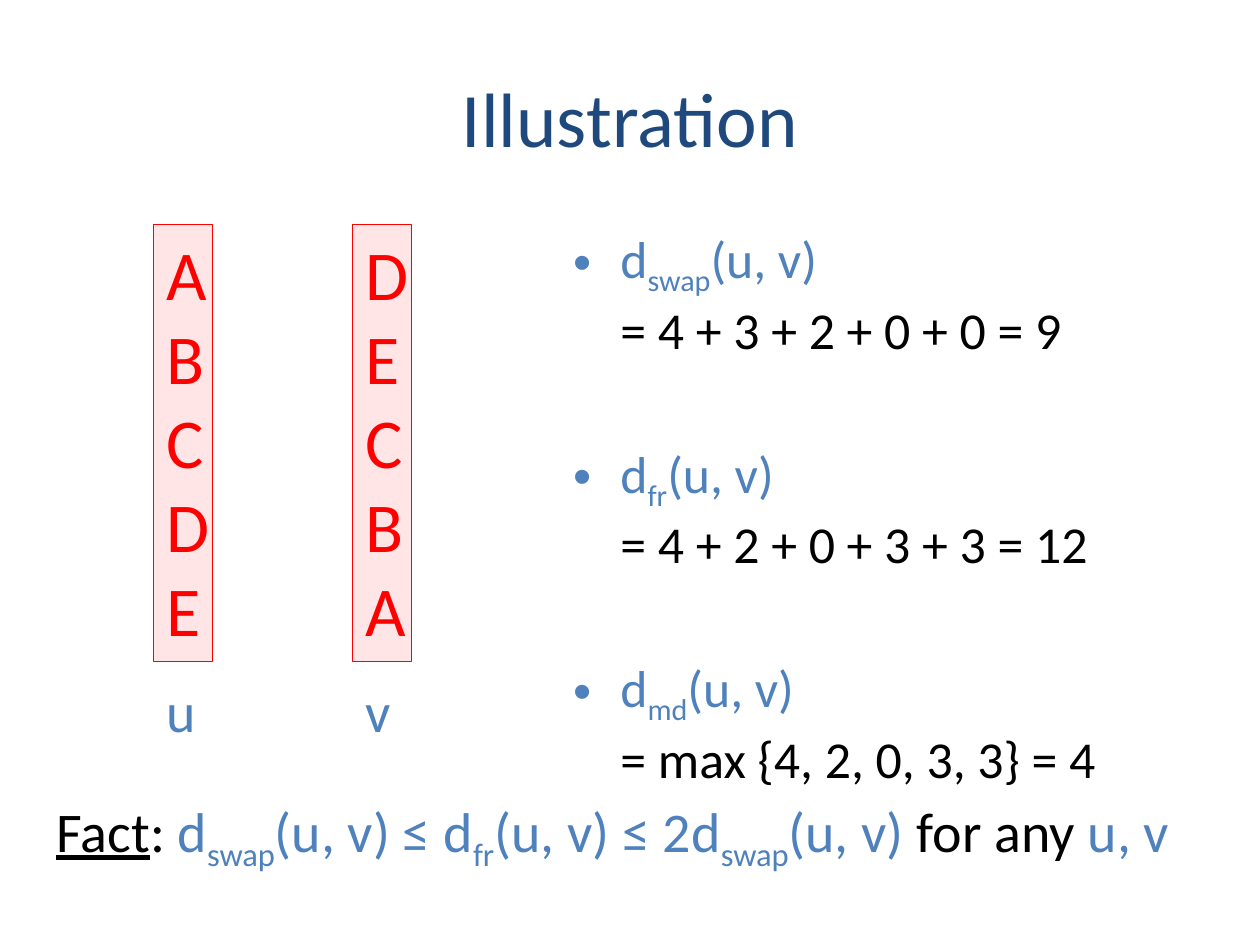
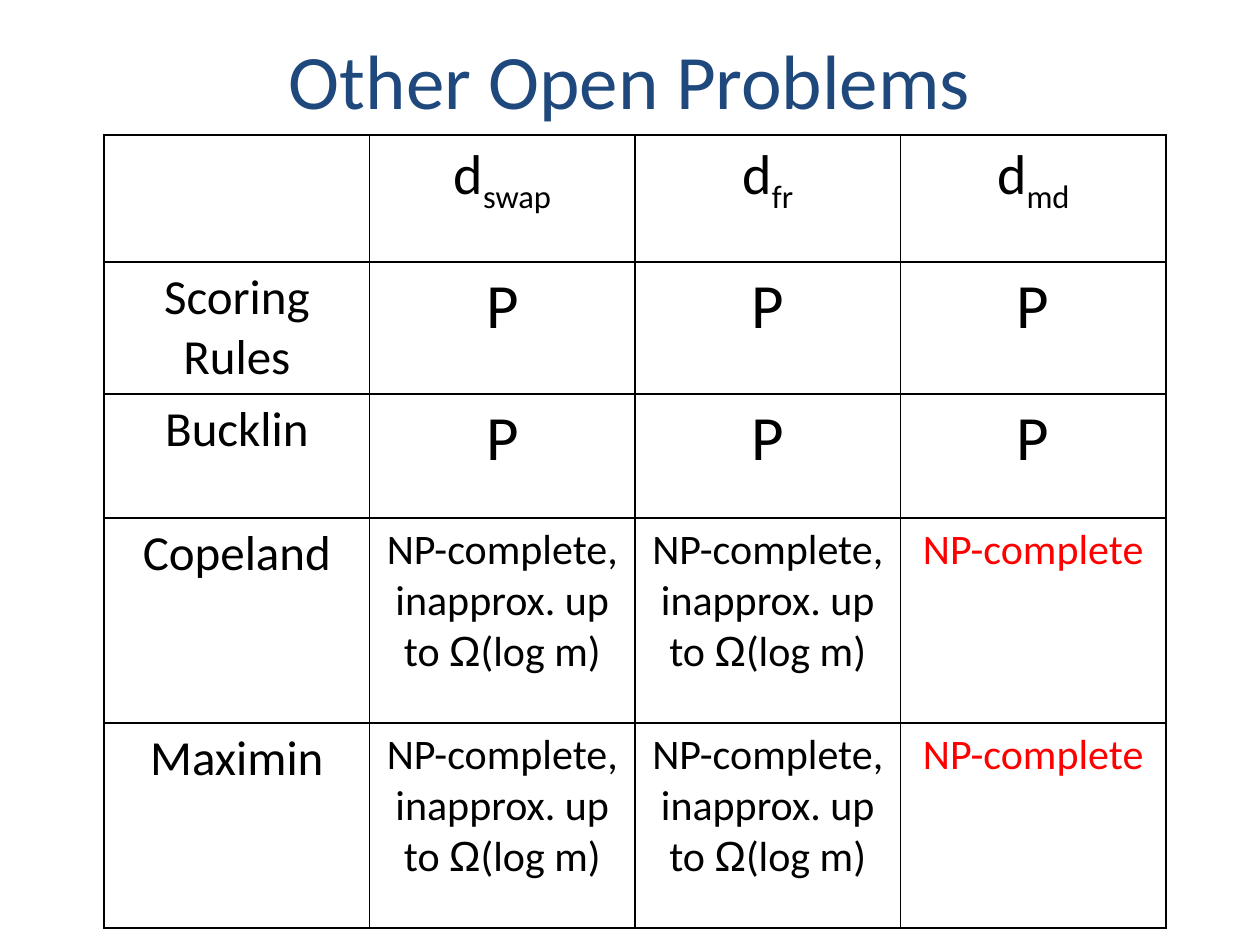
from lxml import etree
from pptx import Presentation
from pptx.dml.color import RGBColor
from pptx.enum.shapes import MSO_SHAPE
from pptx.enum.text import MSO_ANCHOR, PP_ALIGN
from pptx.oxml import parse_xml
from pptx.oxml.ns import nsdecls, qn
from pptx.util import Pt

RECT = MSO_SHAPE.RECTANGLE
TOP, MIDDLE = MSO_ANCHOR.TOP, MSO_ANCHOR.MIDDLE
LEFT, CENTER = PP_ALIGN.LEFT, PP_ALIGN.CENTER

NAVY = RGBColor(0x1F, 0x49, 0x7D)
BLUE = RGBColor(0x4F, 0x81, 0xBD)
RED = RGBColor(0xFF, 0, 0)
BLACK = RGBColor(0, 0, 0)
FONT, GREEK = "Calibri", "Arial"
SUB = "-25000"

TITLES = [("Illustration", 21.6), ("Other Open Problems", 0)]


def dist(name, color=BLUE, tail="(u, v)"):
    return [("d", color), (name, color, SUB), (tail, color)]


VOTES = [("u", ["ABCDE"], 87.84), ("v", ["DE", "CBA"], 201.6)]
SUMS = [
    ("swap", "= 4 + 3 + 2 + 0 + 0 = 9"),
    ("fr", "= 4 + 2 + 0 + 3 + 3 = 12"),
    ("md", "= max {4, 2, 0, 3, 3} = 4"),
]
FACT = [
    ("Fact", BLACK, None, True), (": ", BLACK),
    *dist("swap"), (" ≤ ", BLUE), *dist("fr"), (" ≤ 2", BLUE), *dist("swap"),
    (" for any ", BLACK), ("u, v", BLUE),
]

HEADS = ["swap", "fr", "md"]
EASY = (36, [("P", BLACK)])
HARD = (24, [("NP-complete, inapprox. up to ", BLACK),
             ("Ω", BLACK, None, False, GREEK), ("(log m)", BLACK)])
NEW = (24, [("NP-complete", RED)])
RULES = [
    ("Scoring Rules", [EASY] * 3, 75.4),
    ("Bucklin", [EASY] * 3, 70.9),
    ("Copeland", [HARD, HARD, NEW], 117.1),
    ("Maximin", [HARD, HARD, NEW], 117.1),
]
HEAD_H, COL_W = 72.6, 151.7


def add_run(para, size, text, color, base=None, line=False, face=FONT):
    run = para.add_run()
    run.text = text
    form = {"name": face, "size": Pt(size), "underline": line or None}
    for key, val in form.items():
        setattr(run.font, key, val)
    run.font.color.rgb = color
    if base:
        run.font._element.set("baseline", base)


def write(para, size, runs, align=LEFT):
    para.alignment = align
    for run in runs:
        add_run(para, size, *run)


def add_box(slide, area, anchor=TOP):
    frame = slide.shapes.add_textbox(*map(Pt, area)).text_frame
    frame.word_wrap = True
    frame.vertical_anchor = anchor
    return frame


def add_slide(deck, title, top):
    slide = deck.slides.add_slide(deck.slide_layouts[6])
    frame = add_box(slide, (36, top, 648, 90), MIDDLE)
    write(frame.paragraphs[0], 44, [(title, NAVY)], CENTER)
    return slide


def add_bullet(para):
    props = para._p.get_or_add_pPr()
    props.set("marL", str(Pt(27)))
    props.set("indent", str(Pt(-27)))
    etree.SubElement(props, qn("a:buFont")).set("typeface", GREEK)
    etree.SubElement(props, qn("a:buChar")).set("char", "•")


def add_vote(slide, name, lines, left):
    bar = slide.shapes.add_shape(RECT, Pt(left), Pt(128.2), Pt(33.8), Pt(249.8))
    bar.shadow.inherit = False
    bar.fill.solid()
    bar.fill.fore_color.rgb = RED
    tint = bar._element.spPr.find(qn("a:solidFill"))[0]
    etree.SubElement(tint, qn("a:alpha")).set("val", "10000")
    bar.line.color.rgb = RED
    bar.line.width = Pt(0.75)
    frame = bar.text_frame
    frame.word_wrap = True
    frame.vertical_anchor = TOP
    for i, text in enumerate(lines):
        para = frame.add_paragraph() if i else frame.paragraphs[0]
        write(para, 40, [(text, RED)])
    label = add_box(slide, (left, 383, 36, 46))
    write(label.paragraphs[0], 32, [(name, BLUE)])


def add_sums(slide):
    frame = add_box(slide, (320.4, 126, 363.6, 356.4))
    for i, (name, total) in enumerate(SUMS):
        para = frame.add_paragraph() if i else frame.paragraphs[0]
        para.space_before = Pt(46.7 if i else 3)
        write(para, 29.6, dist(name))
        para.add_line_break()
        add_run(para, 29.6, total, BLACK)
        add_bullet(para)


def fill_cell(cell, size, runs):
    write(cell.text_frame.paragraphs[0], size, runs, CENTER)
    props = cell._tc.get_or_add_tcPr()
    for side in "LRTB":
        props.append(parse_xml(
            f'<a:ln{side} {nsdecls("a")} w="{Pt(1)}"><a:solidFill>'
            f'<a:srgbClr val="{BLACK}"/></a:solidFill></a:ln{side}>'))
    cell.fill.background()


def add_grid(slide):
    rows = [[(32, [])] + [(32, dist(h, BLACK, "")[:2]) for h in HEADS]]
    rows += [[(28, [(rule, BLACK)])] + cells for rule, cells, _ in RULES]
    highs = [HEAD_H] + [high for _, _, high in RULES]
    count = len(rows[0])
    area = (59.5, 77.1, COL_W * count, sum(highs))
    grid = slide.shapes.add_table(len(rows), count, *map(Pt, area)).table
    for flag in ("first_row", "horz_banding"):
        setattr(grid, flag, False)
    for col in grid.columns:
        col.width = Pt(COL_W)
    for r, (row, high) in enumerate(zip(rows, highs)):
        grid.rows[r].height = Pt(high)
        for c, (size, runs) in enumerate(row):
            fill_cell(grid.cell(r, c), size, runs)


def main():
    deck = Presentation()
    deck.slide_width, deck.slide_height = Pt(720), Pt(540)
    votes, table = [add_slide(deck, *title) for title in TITLES]
    add_sums(votes)
    for vote in VOTES:
        add_vote(votes, *vote)
    fact = add_box(votes, (25.2, 451.4, 679, 46))
    write(fact.paragraphs[0], 32, FACT)
    add_grid(table)
    deck.save("out.pptx")


if __name__ == "__main__":
    main()
